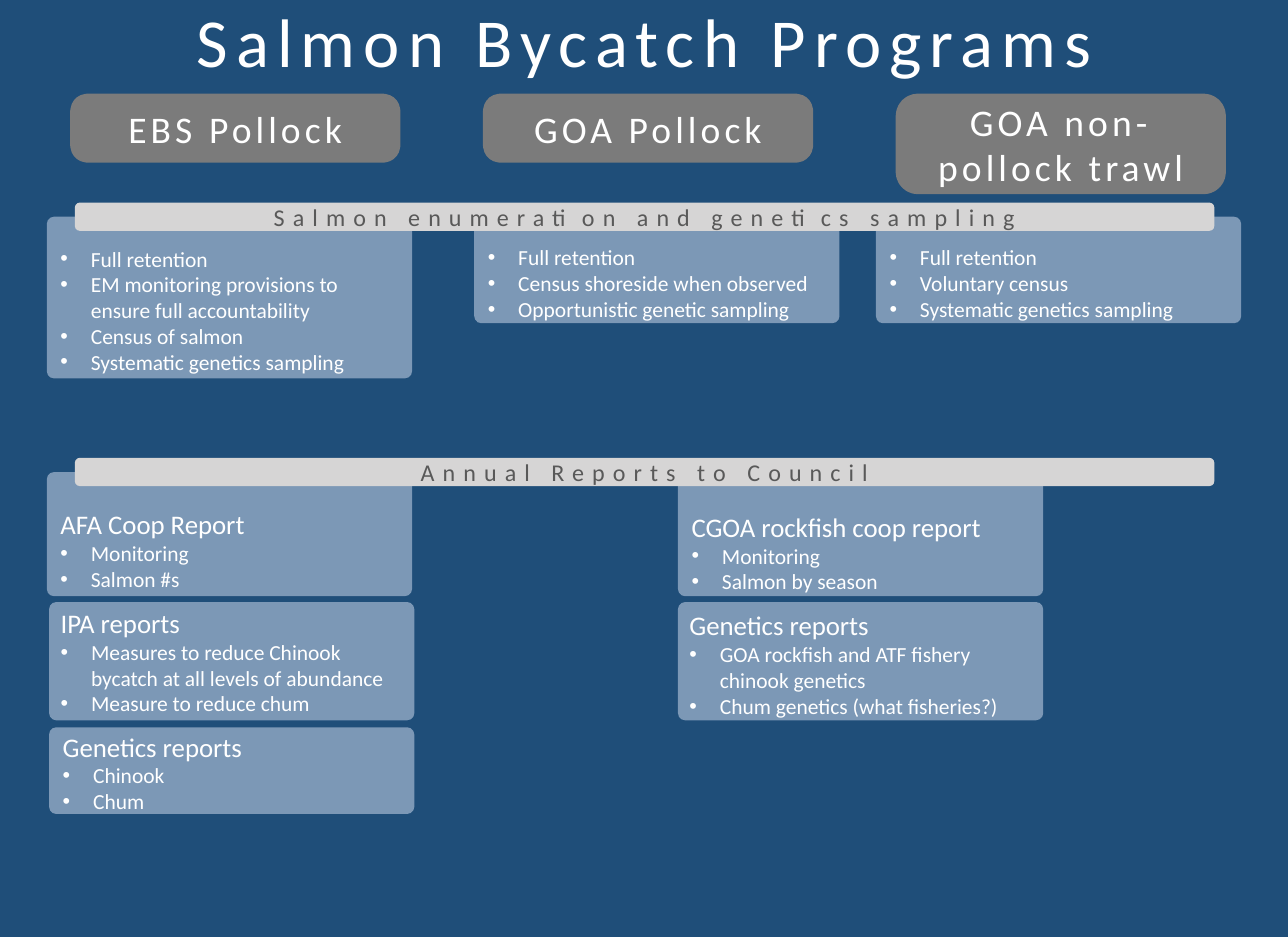
from dataclasses import dataclass

import lxml.etree
import pptx
import pptx.dml.color
import pptx.enum.shapes
import pptx.enum.text
import pptx.oxml.ns
import pptx.util

Pt = pptx.util.Pt
qn = pptx.oxml.ns.qn
ALIGN = pptx.enum.text.PP_ALIGN
ANCHOR = pptx.enum.text.MSO_ANCHOR


@dataclass(frozen=True)
class Theme:
    font: str = "Calibri"
    background: str = "1F4E79"
    card: str = "DAE3F3"
    card_opacity: int = 50
    heading: str = "7B7B7B"
    bar: str = "D6D5D5"
    bar_text: str = "595959"
    text: str = "FFFFFF"
    title_size: float = 42.2
    heading_size: float = 23.1
    card_title_size: float = 16.5
    bar_size: float = 14.8
    bullet_size: float = 13.2
    wide_spacing: float = 5
    heading_spacing: float = 2.5


THEME = Theme()
CARD_WIDTH, CARD_RADIUS = 224.6, 4.4
BULLET_INDENT = 18.7
BAR_OFFSET, BAR_WIDTH, BAR_HEIGHT = 17.3, 700.6, 17.3

# Each card: left and top offset, height, left and top text inset, title, bullets
SAMPLING = [
    (0, 8.6, 99.4, 7.2, 16.5, None,
     ["Full retention", "EM monitoring provisions to ensure full accountability",
      "Census of salmon", "Systematic genetics sampling"]),
    (262.8, 8.6, 65.5, 7.2, 15.8, None,
     ["Full retention", "Census shoreside when observed", "Opportunistic genetic sampling"]),
    (509.8, 8.6, 65.5, 7.2, 15.8, None,
     ["Full retention", "Voluntary census", "Systematic genetics sampling"]),
]
REPORTS = [
    (0, 8.7, 76.3, 7.2, 20.7, "AFA Coop Report", ["Monitoring", "Salmon #s"]),
    (1.4, 88.6, 72.7, 5.8, 1.5, "IPA reports",
     ["Measures to reduce Chinook bycatch at all levels of abundance",
      "Measure to reduce chum"]),
    (1.4, 165.6, 53.3, 7.2, 0.5, "Genetics reports", ["Chinook", "Chum"]),
    (388.1, 12.3, 72.7, 7.2, 18.7, "CGOA rockfish coop report",
     ["Monitoring", "Salmon by season"]),
    (388.1, 88.6, 72.7, 5.8, 3, "Genetics reports",
     ["GOA rockfish and ATF fishery chinook genetics", "Chum genetics (what fisheries?)"]),
]


def rgb(color):
    return pptx.dml.color.RGBColor.from_string(color)


def add_run(p, text, size, color=THEME.text, spacing=0):
    r = p.add_run()
    r.text = text
    r.font.name = THEME.font
    r.font.size = Pt(size)
    r.font.color.rgb = rgb(color)
    if spacing:
        r._r.get_or_add_rPr().set("spc", str(int(spacing * 100)))


def add_bullet(p):
    pPr = p._p.get_or_add_pPr()
    pPr.set("marL", str(Pt(BULLET_INDENT)))
    pPr.set("indent", str(-Pt(BULLET_INDENT)))
    lxml.etree.SubElement(pPr, qn("a:buFont")).set("typeface", "Arial")
    lxml.etree.SubElement(pPr, qn("a:buChar")).set("char", "•")


def set_frame(tf, anchor, left=7.2, top=0, right=7.2):
    tf.word_wrap = True
    tf.vertical_anchor = anchor
    tf.margin_left, tf.margin_top = Pt(left), Pt(top)
    tf.margin_right, tf.margin_bottom = Pt(right), Pt(0)


def add_round_box(slide, x, y, w, h, color):
    sp = slide.shapes.add_shape(pptx.enum.shapes.MSO_SHAPE.ROUNDED_RECTANGLE,
                                Pt(x), Pt(y), Pt(w), Pt(h))
    sp.shadow.inherit = False
    sp.fill.solid()
    sp.fill.fore_color.rgb = rgb(color)
    sp.line.fill.background()
    return sp


def add_label(sp, text, size, color, spacing):
    """Put one line of centred, letter-spaced text in a shape."""
    set_frame(sp.text_frame, ANCHOR.MIDDLE)
    p = sp.text_frame.paragraphs[0]
    p.alignment = ALIGN.CENTER
    add_run(p, text, size, color, spacing)
    return p


def add_card(slide, x, y, h, left, top, title, bullets):
    sp = add_round_box(slide, x, y, CARD_WIDTH, h, THEME.card)
    sp.adjustments[0] = CARD_RADIUS / h
    color = sp._element.spPr.find(qn("a:solidFill")).find(qn("a:srgbClr"))
    lxml.etree.SubElement(color, qn("a:alpha")).set("val", str(THEME.card_opacity * 1000))
    tf = sp.text_frame
    set_frame(tf, ANCHOR.TOP, left, top, left)
    lines = [(title, THEME.card_title_size, False)] if title else []
    lines += [(text, THEME.bullet_size, True) for text in bullets]
    for i, (text, size, bulleted) in enumerate(lines):
        p = tf.add_paragraph() if i else tf.paragraphs[0]
        p.alignment = ALIGN.LEFT
        if bulleted:
            add_bullet(p)
        add_run(p, text, size)


def add_section(slide, x, y, name, cards):
    """Draw cards hanging from a wide bar; x, y is the section's top left."""
    for dx, dy, *card in cards:
        add_card(slide, x + dx, y + dy, *card)
    bar = add_round_box(slide, x + BAR_OFFSET, y, BAR_WIDTH, BAR_HEIGHT, THEME.bar)
    add_label(bar, name, THEME.bar_size, THEME.bar_text, THEME.wide_spacing)


def add_title(slide, x, y, w, h):
    sp = slide.shapes.add_textbox(Pt(x), Pt(y), Pt(w), Pt(h))
    p = add_label(sp, "Salmon Bycatch Programs", THEME.title_size, THEME.text,
                  THEME.wide_spacing)
    p.line_spacing = 0.9


def add_headings(slide, x, y, w, pitch):
    headings = [("EBS Pollock", 32.4), ("GOA Pollock", 32.4), ("GOA non-pollock trawl", 51.8)]
    for i, (name, h) in enumerate(headings):
        sp = add_round_box(slide, x + i * pitch, y, w, h, THEME.heading)
        sp.line.color.rgb = rgb(THEME.heading)
        sp.line.width = Pt(10)
        add_label(sp, name, THEME.heading_size, THEME.text, THEME.heading_spacing)


def main():
    prs = pptx.Presentation()
    prs.slide_width, prs.slide_height = Pt(792), Pt(576)
    slide = prs.slides.add_slide(prs.slide_layouts[6])
    slide.background.fill.solid()
    slide.background.fill.fore_color.rgb = rgb(THEME.background)
    add_section(slide, 28.8, 124.6, "Salmon enumeration and genetics sampling", SAMPLING)
    add_section(slide, 28.8, 281.5, "Annual Reports to Council", REPORTS)
    add_title(slide, 54.7, 7.2, 683.3, 41)
    add_headings(slide, 48.2, 62.6, 193, 253.8)
    prs.save("out.pptx")


if __name__ == "__main__":
    main()
